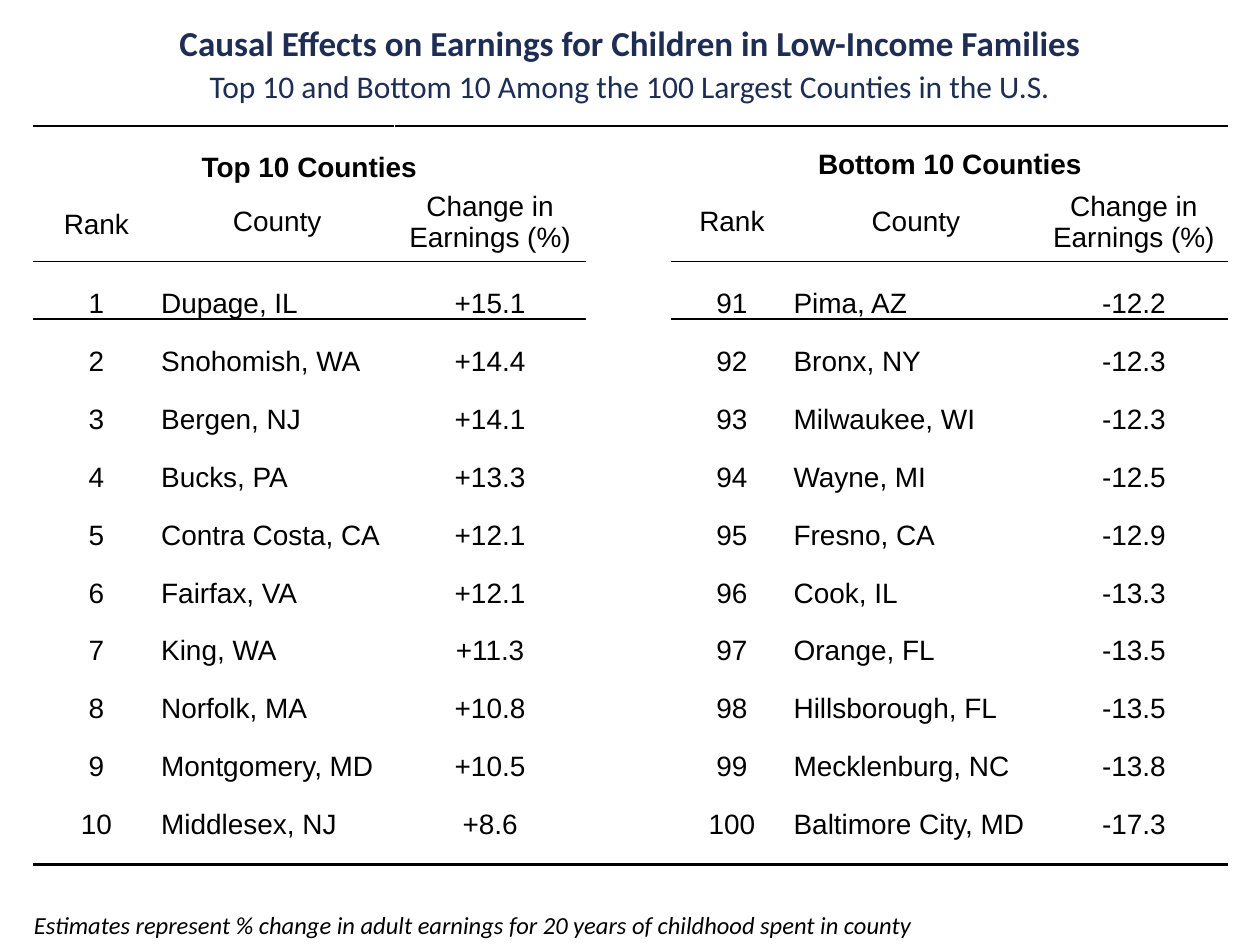
import pptx
import pptx.dml.color
import pptx.enum.text
import pptx.oxml
import pptx.oxml.ns
import pptx.util
from pptx.util import Inches

CENTER = pptx.enum.text.PP_ALIGN.CENTER
LEFT = pptx.enum.text.PP_ALIGN.LEFT
MIDDLE = pptx.enum.text.MSO_ANCHOR.MIDDLE
BOTTOM = pptx.enum.text.MSO_ANCHOR.BOTTOM
BLACK, WHITE, NAVY = "000000", "FFFFFF", "1E2D53"
NO_STYLE = "{2D5ABB26-0587-4C30-8999-92F81FD0307C}"

TEXTS = [
    ("Causal Effects on Earnings for Children in Low-Income Families",
     (0, 0.17, 10, 0.34), 20, NAVY, CENTER, 0, {"bold": True}),
    ("Top 10 and Bottom 10 Among the 100 Largest Counties in the U.S.",
     (0, 0.53, 10, 0.3), 18, NAVY, CENTER, 0, {}),
    ("Estimates represent % change in adult earnings for 20 years of childhood spent in county",
     (0.17, 7.17, 8.25, 0.31), 14, BLACK, LEFT, None, {"italic": True}),
]
HEADERS = ["Rank", "County", "Change in Earnings (%)"]
GROUPS = [
    ("Top 10 Counties", 0, 1, [
        ("Dupage, IL", "+15.1"), ("Snohomish, WA", "+14.4"),
        ("Bergen, NJ", "+14.1"), ("Bucks, PA", "+13.3"),
        ("Contra Costa, CA", "+12.1"), ("Fairfax, VA", "+12.1"),
        ("King, WA", "+11.3"), ("Norfolk, MA", "+10.8"),
        ("Montgomery, MD", "+10.5"), ("Middlesex, NJ", "+8.6")]),
    ("Bottom 10 Counties", 4, 91, [
        ("Pima, AZ", "-12.2"), ("Bronx, NY", "-12.3"),
        ("Milwaukee, WI", "-12.3"), ("Wayne, MI", "-12.5"),
        ("Fresno, CA", "-12.9"), ("Cook, IL", "-13.3"),
        ("Orange, FL", "-13.5"), ("Hillsborough, FL", "-13.5"),
        ("Mecklenburg, NC", "-13.8"), ("Baltimore City, MD", "-17.3")]),
]
COL_WIDTHS = [1.01, 1.86, 1.52, 0.68, 0.96, 1.96, 1.5]
ROW_HEIGHTS = [0.17, 0.28, 0.62] + [0.46] * 10 + [0.19]
TITLE_ROW, HEADER_ROW, FIRST_ROW, LAST_ROW = 1, 2, 3, len(ROW_HEIGHTS) - 1


def rgb(color):
    return pptx.dml.color.RGBColor.from_string(color)


def style(p, size, color, name, align, bold=False, italic=False):
    p.alignment = align
    p.font.size = pptx.util.Pt(size)
    p.font.name = name
    p.font.color.rgb = rgb(color)
    p.font.bold = bold
    p.font.italic = italic


def set_margins(obj, left, top, right, bottom):
    obj.margin_left, obj.margin_top = Inches(left), Inches(top)
    obj.margin_right, obj.margin_bottom = Inches(right), Inches(bottom)


def add_text(s, text, box, size, color, align, inset, look):
    tf = s.shapes.add_textbox(*map(Inches, box)).text_frame
    tf.word_wrap = True
    if inset is not None:
        set_margins(tf, inset, inset, inset, inset)
    tf.text = text
    style(tf.paragraphs[0], size, color, "Calibri", align, **look)


def borders(row, col):
    edges = {}
    if row == 0:
        edges = {"L": (WHITE, 1), "R": (WHITE, 1), "T": (BLACK, 1.5)}
    elif row == LAST_ROW:
        edges = {"B": (BLACK, 1.5)}
    elif col != 3 and row == HEADER_ROW:
        edges = {"B": (BLACK, 1)}
    elif col != 3 and row == FIRST_ROW:
        edges = {"T": (BLACK, 1)}
    return edges


def add_borders(cell, edges):
    tcPr = cell._tc.get_or_add_tcPr()
    for side in "LRTB":
        if side in edges:
            color, width = edges[side]
            tcPr.append(pptx.oxml.parse_xml(
                f'<a:ln{side} {pptx.oxml.ns.nsdecls("a")} w="{pptx.util.Pt(width)}">'
                f'<a:solidFill><a:srgbClr val="{color}"/></a:solidFill></a:ln{side}>'))


def put(cell, text, head=False, bold=False, align=CENTER, spacing=None):
    set_margins(cell, *((0.06, 0, 0.06, 0) if head else (0.01, 0.01, 0.01, 0)))
    cell.vertical_anchor = MIDDLE if head else BOTTOM
    cell.text = text
    p = cell.text_frame.paragraphs[0]
    style(p, 16, BLACK, "Arial", align, bold)
    if spacing:
        p.line_spacing = spacing


def add_county_table(s):
    frame = s.shapes.add_table(len(ROW_HEIGHTS), len(COL_WIDTHS), Inches(0.26), Inches(1),
                               Inches(sum(COL_WIDTHS)), Inches(sum(ROW_HEIGHTS)))
    table = frame.table
    table.first_row = table.horz_banding = False
    table._tbl.tblPr.find(pptx.oxml.ns.qn("a:tableStyleId")).text = NO_STYLE
    for col, width in zip(table.columns, COL_WIDTHS):
        col.width = Inches(width)
    for row, height in zip(table.rows, ROW_HEIGHTS):
        row.height = Inches(height)

    for r in range(len(ROW_HEIGHTS)):
        for c in range(len(COL_WIDTHS)):
            cell = table.cell(r, c)
            add_borders(cell, borders(r, c))
            cell.fill.solid()
            cell.fill.fore_color.rgb = rgb(WHITE)
            set_margins(cell, 0, 0, 0, 0)
            style(cell.text_frame.paragraphs[0], 6, BLACK, "Arial", LEFT)

    table.cell(0, 0).merge(table.cell(0, 1))
    table.cell(0, 2).merge(table.cell(0, 6))
    for title, start, first_rank, counties in GROUPS:
        spacing = 1.15 if start == 0 else None
        table.cell(TITLE_ROW, start).merge(table.cell(TITLE_ROW, start + 2))
        put(table.cell(TITLE_ROW, start), title, head=True, bold=True, spacing=spacing)
        for i, header in enumerate(HEADERS):
            put(table.cell(HEADER_ROW, start + i), header, head=True,
                spacing=spacing if i == 0 else None)
        for i, (county, change) in enumerate(counties):
            for j, text in enumerate((str(first_rank + i), county, change)):
                put(table.cell(FIRST_ROW + i, start + j), text,
                    align=LEFT if j == 1 else CENTER)


def main():
    prs = pptx.Presentation()
    prs.slide_width, prs.slide_height = Inches(10), Inches(7.5)
    s = prs.slides.add_slide(prs.slide_layouts[6])
    add_county_table(s)
    for item in TEXTS:
        add_text(s, *item)
    prs.save("out.pptx")


if __name__ == "__main__":
    main()
